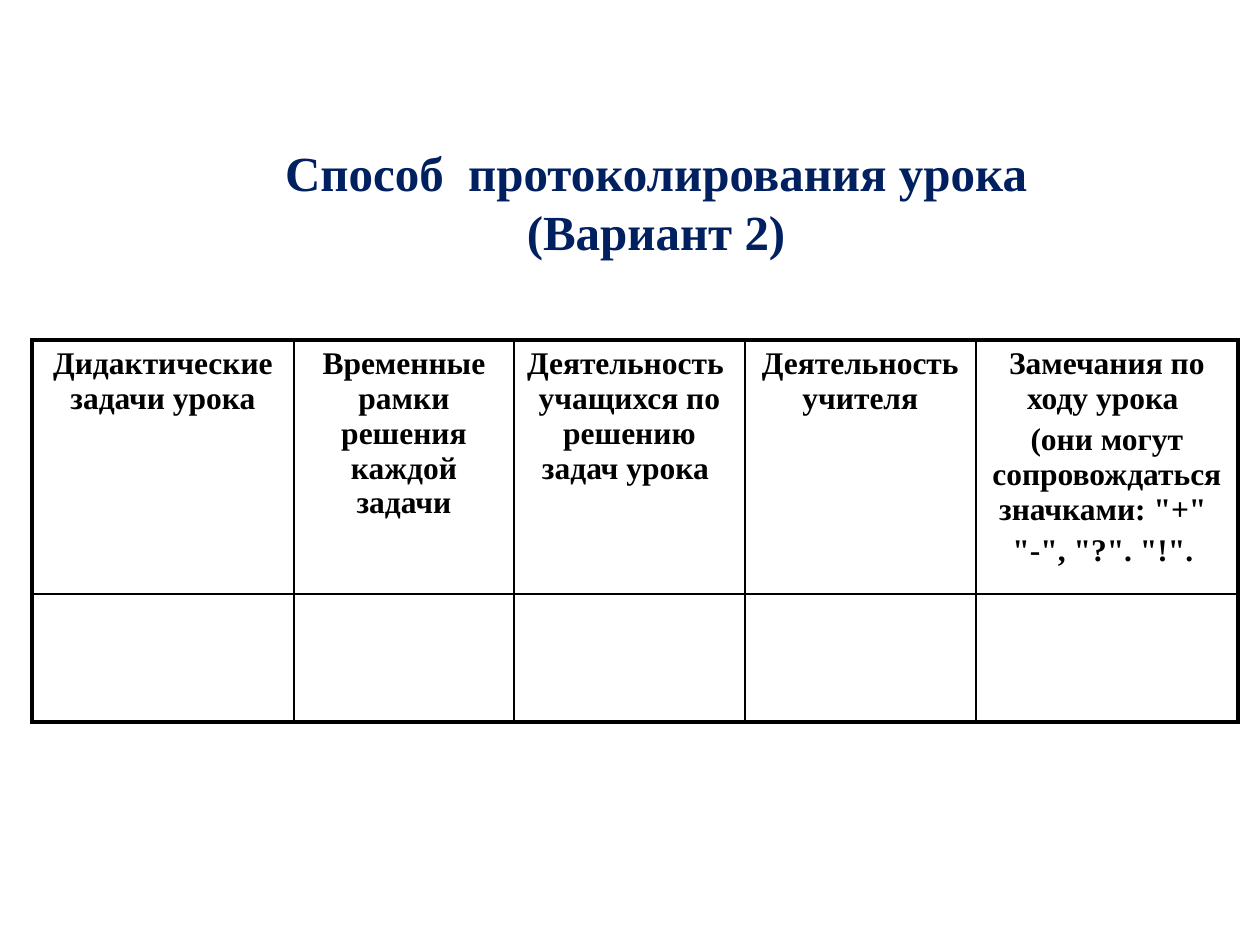
from copy import deepcopy
from dataclasses import dataclass

from lxml.etree import SubElement
from pptx import Presentation
from pptx.dml.color import RGBColor
from pptx.enum.text import MSO_ANCHOR, MSO_AUTO_SIZE, PP_ALIGN
from pptx.oxml.ns import qn
from pptx.table import _Cell
from pptx.text.text import TextFrame
from pptx.util import Emu, Pt


@dataclass(frozen=True)
class Theme:
    font: str = "Times New Roman"
    title_color: str = "002060"
    ink: str = "000000"
    title_size: int = 28
    body_size: int = 18
    outer_line: float = 2.25
    inner_line: float = 1


@dataclass(frozen=True)
class Column:
    width: int
    heading: str


THEME = Theme()
EMU_PER_PX = 914400 / 126

COLUMNS = [
    Column(262, "Дидактические задачи урока"),
    Column(220, "Временные рамки решения каждой задачи"),
    Column(231, "Деятельность  учащихся по решению задач урока "),
    Column(231, "Деятельность учителя"),
    Column(262, 'Замечания по ходу урока \n(они могут сопровождаться значками: "+" \n"-", "?". "!". '),
]
ROW_HEIGHTS = [254, 128]


def px(n: int) -> Emu:
    return Emu(round(n * EMU_PER_PX))


def write(tf: TextFrame, text: str, *, size: int, color: str, space_before: float = 0) -> None:
    """Bold centred text: \\n starts a paragraph, \\v breaks a line."""
    tf.text = text
    for p in tf.paragraphs:
        p.alignment = PP_ALIGN.CENTER
        p.space_before = Pt(space_before)
        for r in p.runs:
            r.font.name = THEME.font
            r.font.size = Pt(size)
            r.font.bold = True
            r.font.color.rgb = RGBColor.from_string(color)
        # A line break keeps the size of the text around it
        for br in p._p.findall(qn("a:br")):
            br.insert(0, deepcopy(p.runs[0]._r.rPr))


def set_borders(cell: _Cell, widths: dict[str, float]) -> None:
    tc_pr = cell._tc.get_or_add_tcPr()
    for side, width in widths.items():
        ln = SubElement(tc_pr, qn(f"a:ln{side}"), w=str(Pt(width)))
        fill = SubElement(ln, qn("a:solidFill"))
        SubElement(fill, qn("a:srgbClr"), val=THEME.ink)


def line_width(on_edge: bool) -> float:
    return THEME.outer_line if on_edge else THEME.inner_line


prs = Presentation()
prs.slide_width, prs.slide_height = px(1260), px(945)
s = prs.slides.add_slide(prs.slide_layouts[5])

# Title
title = s.shapes.title
title.left, title.top, title.width, title.height = px(262), px(136), px(788), px(131)
tf = title.text_frame
tf.word_wrap = False
tf.auto_size = MSO_AUTO_SIZE.SHAPE_TO_FIT_TEXT
tf.vertical_anchor = MSO_ANCHOR.MIDDLE
write(tf, "Способ  протоколирования урока\v(Вариант 2)",
      size=THEME.title_size, color=THEME.title_color)

# Lesson record table
table = s.shapes.add_table(
    len(ROW_HEIGHTS), len(COLUMNS), px(32), px(340),
    px(sum(c.width for c in COLUMNS)), px(sum(ROW_HEIGHTS)),
).table
table.first_row = table.horz_banding = False
for row, height in zip(table.rows, ROW_HEIGHTS):
    row.height = px(height)

last_row, last_col = len(ROW_HEIGHTS) - 1, len(COLUMNS) - 1
for j, column in enumerate(COLUMNS):
    table.columns[j].width = px(column.width)
    write(table.cell(0, j).text_frame, column.heading, size=THEME.body_size,
          color=THEME.ink, space_before=0.2 * THEME.body_size)
    for i in range(len(ROW_HEIGHTS)):
        cell = table.cell(i, j)
        set_borders(cell, {
            "L": line_width(j == 0),
            "R": line_width(j == last_col),
            "T": line_width(i == 0),
            "B": line_width(i == last_row),
        })
        cell.fill.background()

prs.save("out.pptx")
